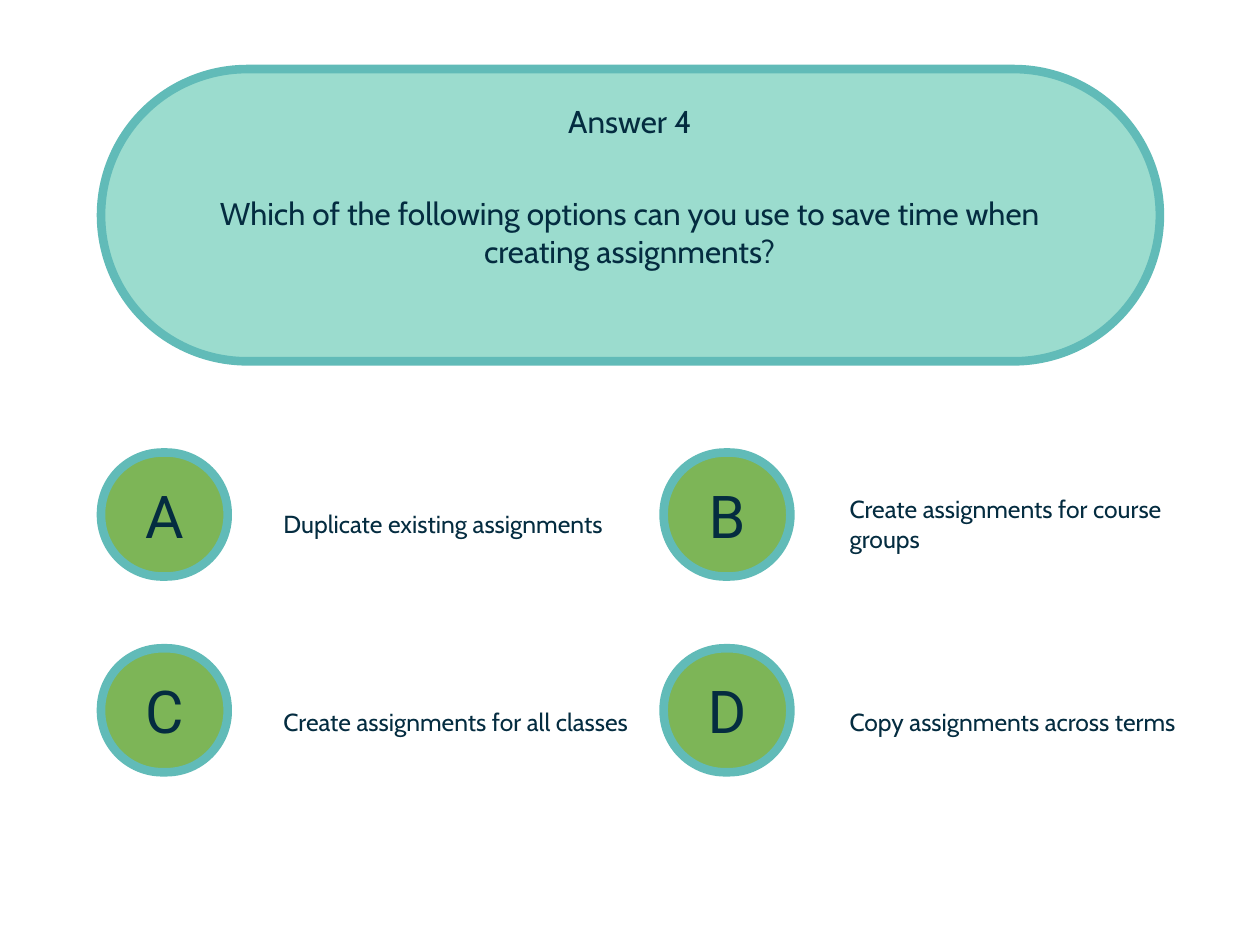
from dataclasses import dataclass

from lxml import etree
from pptx import Presentation
from pptx.dml.color import RGBColor
from pptx.enum.shapes import MSO_SHAPE
from pptx.enum.text import MSO_ANCHOR, MSO_AUTO_SIZE, PP_ALIGN
from pptx.oxml.ns import qn
from pptx.util import Inches, Pt

ROUND = MSO_SHAPE.ROUNDED_RECTANGLE
MIDDLE = MSO_ANCHOR.MIDDLE
FIXED = MSO_AUTO_SIZE.NONE
LEFT = PP_ALIGN.LEFT
CENTER = PP_ALIGN.CENTER


@dataclass(frozen=True)
class Theme:
    ink: RGBColor = RGBColor(0x04, 0x2C, 0x40)
    edge: RGBColor = RGBColor(0x61, 0xBB, 0xB8)
    mint: RGBColor = RGBColor(0x9B, 0xDC, 0xCE)
    green: RGBColor = RGBColor(0x7D, 0xB5, 0x57)
    text: str = "Cabin"
    mark: str = "Roboto"
    head: float = 25.6
    label: float = 20
    letter: float = 48
    line: float = 7


THEME = Theme()
ANSWERS = (
    ("A", "Duplicate existing assignments"),
    ("B", "Create assignments for course groups"),
    ("C", "Create assignments for all classes"),
    ("D", "Copy assignments across terms"),
)


def write(shape, words, size, font=THEME.text, align=CENTER):
    frame = shape.text_frame
    frame.word_wrap = True
    frame.auto_size = FIXED
    frame.vertical_anchor = MIDDLE
    para = frame.paragraphs[0]
    para.alignment = align
    para.space_before = Pt(0)
    para.space_after = Pt(8.5)
    run = para.add_run()
    run.text = words
    run.font.name = font
    run.font.size = Pt(size)
    run.font.color.rgb = THEME.ink
    return para


def place(shape, left, top, width, height):
    shape.left, shape.top = Inches(left), Inches(top)
    shape.width, shape.height = Inches(width), Inches(height)


def add_pill(slide, left, top, width, height, fill, curve):
    pill = slide.shapes.add_shape(
        ROUND, Inches(left), Inches(top), Inches(width), Inches(height))
    pill.adjustments[0] = curve
    pill.shadow.inherit = False
    pill.fill.solid()
    pill.fill.fore_color.rgb = fill
    pill.line.color.rgb = THEME.edge
    pill.line.width = Pt(THEME.line)
    return pill


def add_head(slide):
    title, body = slide.shapes.title, slide.placeholders[1]
    panel = add_pill(slide, 1.14, 0.78, 11.95, 3.3, THEME.mint, 0.5)
    title.element.addprevious(panel.element)
    place(title, 1.07, 1.07, 12.08, 0.58)
    write(title, "Answer 4", THEME.head)
    place(body, 2.01, 2.09, 10.19, 1.06)
    para = write(
        body,
        "Which of the following options can you use to save time when "
        "creating assignments?",
        THEME.head)
    props = para._p.get_or_add_pPr()
    props.set("marL", "0")
    props.set("indent", "0")
    etree.SubElement(props, qn("a:buNone"))


def add_badge(slide, left, top, letter):
    badge = add_pill(slide, left, top, 1.43, 1.4, THEME.green, 0.495)
    frame = badge.text_frame
    frame.margin_left = frame.margin_right = Inches(0.04)
    frame.margin_top = frame.margin_bottom = Inches(0.04)
    write(badge, letter, THEME.letter, THEME.mark)


def add_label(slide, left, top, words):
    box = slide.shapes.add_textbox(
        Inches(left), Inches(top), Inches(4.09), Inches(0.78))
    write(box, words, THEME.label, align=LEFT)


def main():
    deck = Presentation()
    deck.slide_width, deck.slide_height = Inches(14.22), Inches(10.67)
    slide = deck.slides.add_slide(deck.slide_layouts[1])
    add_head(slide)
    for index, (letter, words) in enumerate(ANSWERS):
        row, col = divmod(index, 2)
        add_badge(slide, 1.14 + 6.35 * col, 5.11 + 2.21 * row, letter)
        add_label(slide, 3.1 + 6.39 * col, 5.52 + 2.24 * row, words)
    deck.save("out.pptx")


if __name__ == "__main__":
    main()
